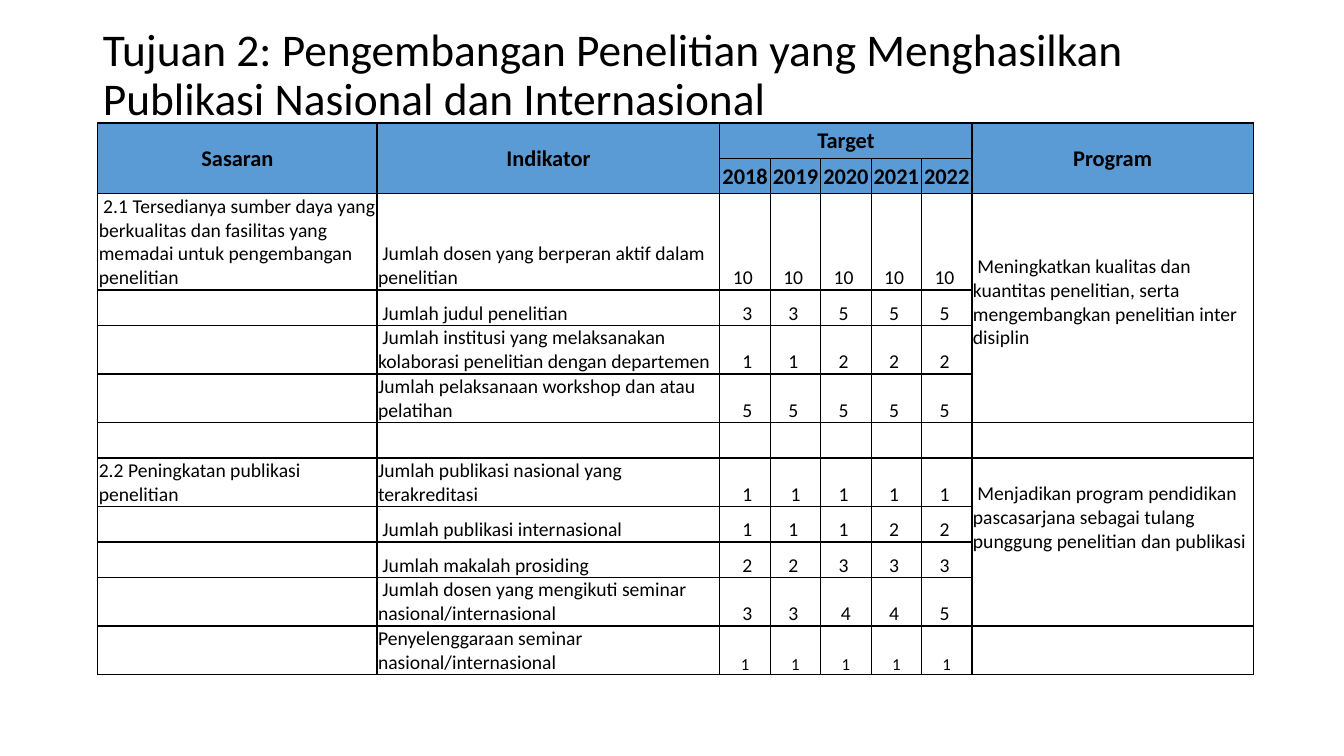
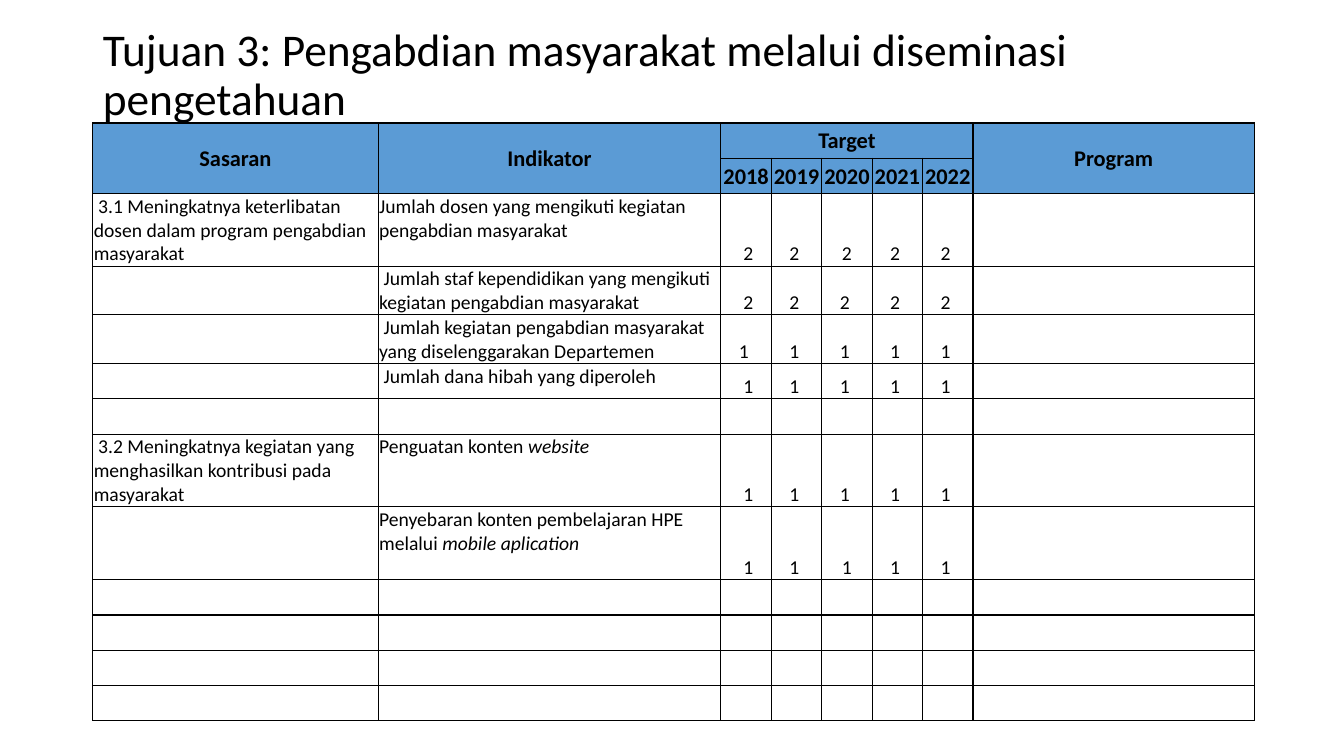
from collections import namedtuple

from lxml.etree import SubElement
from pptx import Presentation
from pptx.dml.color import RGBColor
from pptx.enum.text import MSO_ANCHOR as Anchor, MSO_AUTO_SIZE as AutoSize, PP_ALIGN as Align
from pptx.oxml.ns import qn
from pptx.util import Inches, Pt

COLORS = {"text": "000000", "border": "000000", "header": "5B9BD5"}
YEARS = ["2018", "2019", "2020", "2021", "2022"]
HEADINGS = {0: "Sasaran", 1: "Indikator", 7: "Program"}
PROGRAM_COLUMN = 7
PROGRAM_ROWS = 4
LINE_HEIGHT = 0.24
Row = namedtuple("Row", "goal indicator targets target_size gap", defaults=("", "", "", 14, 0))


class Deck:
    font = "Calibri"

    def __init__(self):
        self.presentation = Presentation()
        self.presentation.slide_width = Inches(13.33)
        self.presentation.slide_height = Inches(7.5)
        self.slide = None

    def add_slide(self, heading):
        self.slide = self.presentation.slides.add_slide(self.presentation.slide_layouts[5])
        title = self.slide.shapes.title
        title.left, title.top = Inches(0.92), Inches(0.4)
        title.width, title.height = Inches(11.5), Inches(0.71)
        frame = title.text_frame
        frame.word_wrap = True
        frame.auto_size = AutoSize.NONE
        frame.vertical_anchor = Anchor.MIDDLE
        frame.paragraphs[0].line_spacing = 0.9
        self.add_text(frame, heading, 32.4)

    def add_text(self, frame, text, size, bold=False, align=Align.LEFT):
        paragraph = frame.paragraphs[0]
        paragraph.alignment = align
        for index, part in enumerate(text.split("*")):
            if not part:
                continue
            run = paragraph.add_run()
            run.text = part
            run.font.name = self.font
            run.font.size = Pt(size)
            run.font.bold = bold
            run.font.italic = index % 2 == 1
            run.font.color.rgb = RGBColor.from_string(COLORS["text"])

    def style_cell(self, cell, is_header):
        cell.margin_left = cell.margin_right = cell.margin_top = Inches(0.01)
        cell.margin_bottom = 0
        cell.vertical_anchor = Anchor.MIDDLE if is_header else Anchor.BOTTOM
        properties = cell._tc.get_or_add_tcPr()
        for side in ("a:lnL", "a:lnR", "a:lnT", "a:lnB"):
            line = SubElement(properties, qn(side), w=str(Pt(1)))
            fill = SubElement(line, qn("a:solidFill"))
            SubElement(fill, qn("a:srgbClr"), val=COLORS["border"])
        if is_header:
            cell.fill.solid()
            cell.fill.fore_color.rgb = RGBColor.from_string(COLORS["header"])
        else:
            cell.fill.background()

    def add_header(self, table):
        for column, heading in HEADINGS.items():
            table.cell(0, column).merge(table.cell(1, column))
            self.add_text(table.cell(0, column).text_frame, heading, 16, True, Align.CENTER)
        table.cell(0, 2).merge(table.cell(0, 6))
        self.add_text(table.cell(0, 2).text_frame, "Target", 16, True, Align.CENTER)
        for column, year in enumerate(YEARS, 2):
            self.add_text(table.cell(1, column).text_frame, year, 16, True, Align.CENTER)

    def add_target_table(self, left, goal_width, rows, programs, indicator_anchor):
        widths = [goal_width, 3.4] + [0.5] * len(YEARS) + [2.79]
        row_count = len(rows) + 2
        table = self.slide.shapes.add_table(
            row_count, len(widths), Inches(left), Inches(1.22),
            Inches(sum(widths)), Inches(0.35 * row_count)).table
        table.first_row = table.horz_banding = False
        for column, width in zip(table.columns, widths):
            column.width = Inches(width)
        for index, table_row in enumerate(table.rows):
            table_row.height = Inches(0.35)
            for cell in table_row.cells:
                self.style_cell(cell, index < 2)
        self.add_header(table)

        for index, row in enumerate(rows, 2):
            self.add_text(table.cell(index, 0).text_frame, row.goal, 14)
            indicator = table.cell(index, 1)
            indicator.vertical_anchor = indicator_anchor
            indicator.margin_bottom = Inches(row.gap)
            self.add_text(indicator.text_frame, row.indicator, 14)
            for column, target in enumerate(row.targets.split(","), 2):
                self.add_text(table.cell(index, column).text_frame, target,
                              row.target_size, align=Align.CENTER)

        for index, program in programs.items():
            cell = table.cell(index, PROGRAM_COLUMN)
            cell.merge(table.cell(index + PROGRAM_ROWS - 1, PROGRAM_COLUMN))
            cell.margin_bottom = Inches(3 * LINE_HEIGHT)
            self.add_text(cell.text_frame, program, 14)


RESEARCH = [
    Row(" 2.1 Tersedianya sumber daya yang berkualitas dan fasilitas yang memadai "
        "untuk pengembangan penelitian",
        " Jumlah dosen yang berperan aktif dalam penelitian", "10 ,10 ,10 ,10 ,10 "),
    Row("", " Jumlah judul penelitian", " 3,3 ,5 ,5 ,5 "),
    Row("", " Jumlah institusi yang melaksanakan kolaborasi penelitian dengan departemen",
        " 1,1 ,2 ,2 ,2 "),
    Row("", "Jumlah pelaksanaan workshop dan atau pelatihan", " 5,5 ,5 ,5 ,5 "),
    Row(),
    Row("2.2 Peningkatan publikasi penelitian",
        "Jumlah publikasi nasional yang terakreditasi", " 1,1,1 ,1 ,1 "),
    Row("", " Jumlah publikasi internasional", " 1,1 ,1 ,2 ,2 "),
    Row("", " Jumlah makalah prosiding", " 2,2 ,3 ,3 ,3 "),
    Row("", " Jumlah dosen yang mengikuti seminar nasional/internasional", " 3,3 ,4,4 ,5 "),
    Row("", "Penyelenggaraan seminar nasional/internasional", "1,1,1,1,1", target_size=12),
]
RESEARCH_PROGRAMS = {
    2: " Meningkatkan kualitas dan kuantitas penelitian, serta mengembangkan "
       "penelitian inter disiplin",
    7: " Menjadikan program pendidikan pascasarjana sebagai tulang punggung "
       "penelitian dan publikasi",
}
COMMUNITY = [
    Row(" 3.1 Meningkatnya keterlibatan dosen dalam program pengabdian masyarakat",
        "Jumlah dosen yang mengikuti kegiatan pengabdian masyarakat", " 2,2 ,2,2 ,2 "),
    Row("", " Jumlah staf kependidikan yang mengikuti kegiatan pengabdian masyarakat",
        " 2,2 ,2 ,2 ,2 "),
    Row("", " Jumlah kegiatan pengabdian masyarakat yang diselenggarakan Departemen",
        "1 ,1 ,1 ,1 ,1 "),
    Row("", " Jumlah dana hibah yang diperoleh", " 1,1 ,1 ,1 ,1 "),
    Row(),
    Row(" 3.2 Meningkatnya kegiatan yang menghasilkan kontribusi pada masyarakat",
        "Penguatan konten *website*", " 1,1 ,1 ,1 ,1 "),
    Row("", "Penyebaran konten pembelajaran HPE melalui *mobile aplication*",
        " 1,1 ,1,1 ,1 ", gap=LINE_HEIGHT),
] + [Row()] * 4


def main():
    deck = Deck()
    deck.add_slide("Tujuan 2: Pengembangan Penelitian yang Menghasilkan "
                   "Publikasi Nasional dan Internasional")
    deck.add_target_table(0.97, 2.77, RESEARCH, RESEARCH_PROGRAMS, Anchor.BOTTOM)
    deck.add_slide("Tujuan 3: Pengabdian masyarakat melalui diseminasi pengetahuan")
    deck.add_target_table(0.92, 2.83, COMMUNITY, {}, Anchor.TOP)
    deck.presentation.save("out.pptx")


if __name__ == "__main__":
    main()
